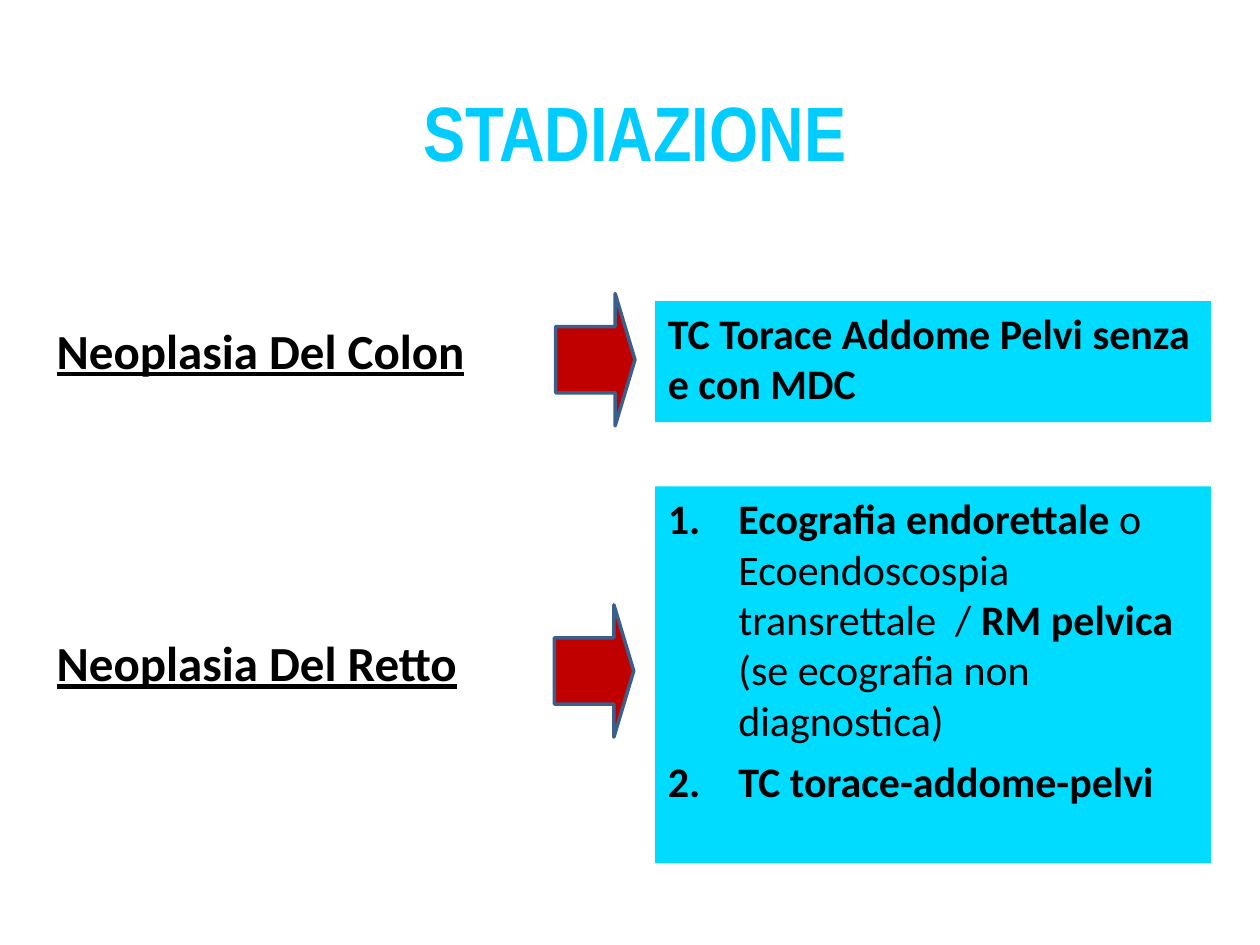
from dataclasses import dataclass

from lxml import etree
from pptx import Presentation
from pptx import util as u
from pptx.dml.color import RGBColor
from pptx.enum import shapes, text
from pptx.oxml import ns


@dataclass(frozen=True)
class Theme:
    """Colours, fonts and type sizes of the deck."""
    title_font: str = "Arial Narrow"
    body_font: str = "Calibri"
    title_color: str = "00CCFF"
    ink: str = "000000"
    panel: str = "00DCFF"
    arrow: str = "C00000"
    arrow_line: str = "3A5F8B"
    title_size: float = 44
    label_size: float = 28
    body_size: float = 24
    space_before: float = 6.4


THEME = Theme()


def place(shape, box):
    """Move a shape to a (left, top, width, height) box in inches."""
    shape.left, shape.top, shape.width, shape.height = map(u.Inches, box)


def fill(shape, color):
    """Give a shape a solid fill."""
    shape.fill.solid()
    shape.fill.fore_color.rgb = RGBColor.from_string(color)


def add_span(para, words, *, size, font=THEME.body_font, color=THEME.ink,
             bold=True, underline=False):
    """Append formatted text to a paragraph."""
    span = para.add_run()
    span.text = words
    span.font.name = font
    span.font.size = u.Pt(size)
    span.font.bold = bold
    span.font.underline = underline
    span.font.color.rgb = RGBColor.from_string(color)


def prepare_frame(shape):
    """Set wrapping, top anchoring and fixed type size on a text frame."""
    frame = shape.text_frame
    frame.word_wrap = True
    frame.auto_size = text.MSO_AUTO_SIZE.NONE
    frame.vertical_anchor = text.MSO_ANCHOR.TOP
    return frame


def set_marker(para, numbered):
    """Number a paragraph with a hanging indent, or clear its bullet."""
    indent = u.Inches(0.56) if numbered else 0
    props = para._p.get_or_add_pPr()
    props.set("marL", str(indent))
    props.set("indent", str(-indent))
    marker = etree.SubElement(props, ns.qn("a:buAutoNum" if numbered else "a:buNone"))
    if numbered:
        marker.set("type", "arabicPeriod")


def fill_title(title, box):
    """Place and write the slide title."""
    place(title, box)
    frame = prepare_frame(title)
    frame.margin_top = u.Inches(0.1)
    para = frame.paragraphs[0]
    para.alignment = text.PP_ALIGN.CENTER
    add_span(para, "STADIAZIONE", size=THEME.title_size, font=THEME.title_font,
             color=THEME.title_color)


def fill_label(label, box, words):
    """Place and write the underlined name of a tumour."""
    place(label, box)
    para = prepare_frame(label).paragraphs[0]
    para.space_before = u.Pt(THEME.space_before)
    add_span(para, words, size=THEME.label_size, underline=True)


def fill_exams(panel, box, items, numbered):
    """Place a coloured panel and write its exams as (words, bold) spans."""
    place(panel, box)
    fill(panel, THEME.panel)
    frame = prepare_frame(panel)
    for index, item in enumerate(items):
        para = frame.add_paragraph() if index else frame.paragraphs[0]
        para.space_before = u.Pt(THEME.space_before)
        set_marker(para, numbered)
        for words, bold in item:
            add_span(para, words, size=THEME.body_size, bold=bold)


def add_arrow(page, box):
    """Add a red block arrow from a label to its exams."""
    arrow = page.shapes.add_shape(shapes.MSO_SHAPE.RIGHT_ARROW, *map(u.Inches, box))
    arrow.shadow.inherit = False
    arrow.adjustments[0], arrow.adjustments[1] = 0.5, 0.25
    fill(arrow, THEME.arrow)
    arrow.line.color.rgb = RGBColor.from_string(THEME.arrow_line)
    arrow.line.width = u.Pt(2)


def main():
    """Build and save the staging slide."""
    deck = Presentation()
    deck.slide_width, deck.slide_height = u.Inches(10), u.Inches(7.5)
    page = deck.slides.add_slide(deck.slide_layouts.get_by_name("Comparison"))
    title, colon, colon_exams, rectum, rectum_exams = list(page.placeholders)[:5]

    fill_title(title, (0.79, 0.57, 8.5, 1.05))

    fill_label(colon, (0.35, 2.49, 4.06, 1.02), "Neoplasia Del Colon")
    add_arrow(page, (4.41, 2.33, 0.63, 1.05))
    fill_exams(colon_exams, (5.2, 2.39, 4.41, 0.96),
               [[("TC Torace Addome Pelvi senza e con MDC", True)]], numbered=False)

    fill_label(rectum, (0.35, 4.97, 4.45, 0.74), "Neoplasia Del Retto")
    add_arrow(page, (4.4, 4.8, 0.63, 1.05))
    fill_exams(rectum_exams, (5.2, 3.86, 4.41, 2.99), [
        [("Ecografia endorettale ", True),
         ("o Ecoendoscospia transrettale  / ", False),
         ("RM pelvica ", True),
         ("(se ecografia non diagnostica)", False)],
        [("TC torace-addome-pelvi", True)],
    ], numbered=True)

    for holder in list(page.placeholders):
        if not holder.text_frame.text:
            holder.element.getparent().remove(holder.element)
    deck.save("out.pptx")


if __name__ == "__main__":
    main()
